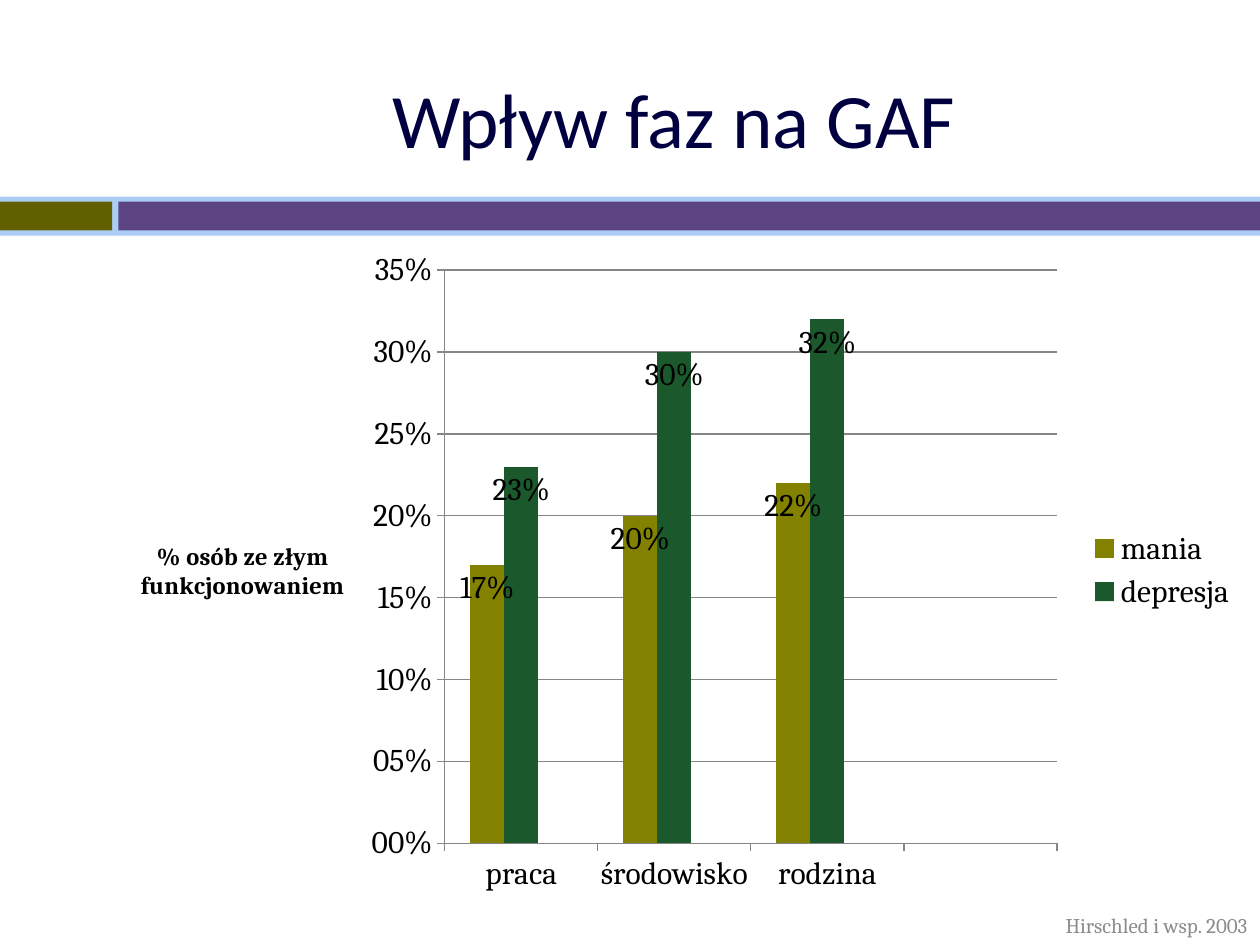
"""Build the slide on how illness phases affect GAF, with a clustered column chart."""
from lxml.etree import SubElement
from pptx import Presentation
from pptx.chart.data import CategoryChartData
from pptx.dml.color import RGBColor
from pptx.enum.chart import XL_CHART_TYPE as ChartType, XL_LABEL_POSITION as LabelPos
from pptx.enum.chart import XL_LEGEND_POSITION as LegendPos, XL_TICK_MARK as Tick
from pptx.enum.shapes import MSO_SHAPE as Shape
from pptx.enum.text import MSO_ANCHOR as Anchor, PP_ALIGN as Align
from pptx.oxml import parse_xml
from pptx.oxml.ns import nsdecls, qn
from pptx.util import Inches, Pt

COLORS = {
    "band": "ABCDF4", "olive": "606000", "purple": "5C4381", "title": "000040",
    "text": "000000", "source": "8C8C8C", "axis": "868686",
    "mania": "828200", "depresja": "1B582B", "Series 3": "009FEC",
}
PERCENT = "#,#00%"


def color(name):
    return RGBColor.from_string(COLORS[name])


def add_text(text, left, top, width, height, size, font, color_name, align):
    frame = slide.shapes.add_textbox(
        Inches(left), Inches(top), Inches(width), Inches(height)).text_frame
    frame.word_wrap = True
    frame.vertical_anchor = Anchor.MIDDLE
    frame.text = text
    paragraph = frame.paragraphs[0]
    paragraph.alignment = align
    run_font = paragraph.runs[0].font
    run_font.size, run_font.name = Pt(size), font
    run_font.color.rgb = color(color_name)


prs = Presentation()
prs.slide_width, prs.slide_height = Inches(10), Inches(7.5)
slide = prs.slides.add_slide(prs.slide_layouts[6])

for fill, left, top, width, height in [
    ("band", 0, 1.56, 10, 0.31),
    ("olive", 0, 1.6, 0.89, 0.23),
    ("purple", 0.94, 1.6, 9.06, 0.23),
]:
    bar = slide.shapes.add_shape(
        Shape.RECTANGLE, Inches(left), Inches(top), Inches(width), Inches(height))
    bar.shadow.inherit = False
    bar.fill.solid()
    bar.fill.fore_color.rgb = color(fill)
    bar.line.fill.background()

add_text("Wpływ faz na GAF ", 0.92, 0.31, 9, 1.25, 44, "Calibri", "title", Align.CENTER)

scores = CategoryChartData(number_format=PERCENT)
scores.categories = ["praca", "środowisko", "rodzina", ""]
scores.add_series("mania", [0.17, 0.2, 0.22, None])
scores.add_series("depresja", [0.23, 0.3, 0.32, None])
scores.add_series("Series 3", [None] * 4)
chart = slide.shapes.add_chart(
    ChartType.COLUMN_CLUSTERED, Inches(0.92), Inches(1.88), Inches(9), Inches(5.29),
    scores).chart
chart.has_title = False
chart.font.size, chart.font.name = Pt(18), "Cambria"
chart.font.color.rgb = color("text")

plot = chart.plots[0]
plot.gap_width, plot.overlap = 150, 0
plot.vary_by_categories = False
for series in plot.series:
    series.format.fill.solid()
    series.format.fill.fore_color.rgb = color(series.name)
    labels = series.data_labels
    labels.show_value = True
    labels.position = LabelPos.INSIDE_END
    labels.number_format, labels.number_format_is_linked = PERCENT, False

percent_axis = chart.value_axis
percent_axis.minimum_scale, percent_axis.maximum_scale = 0, 0.35
percent_axis.major_unit = 0.05
percent_axis.has_major_gridlines = True
percent_axis.tick_labels.number_format = PERCENT
percent_axis.tick_labels.number_format_is_linked = False
for axis in (chart.category_axis, percent_axis):
    axis.major_tick_mark = Tick.OUTSIDE
for part in (chart.category_axis, percent_axis, percent_axis.major_gridlines):
    part.format.line.color.rgb = color("axis")
    part.format.line.width = Pt(0.75)

axis_title = percent_axis.axis_title.text_frame
axis_title.text = "% osób ze złym funkcjonowaniem"
title_font = axis_title.paragraphs[0].runs[0].font
title_font.size, title_font.bold, title_font.name = Pt(14), True, "Cambria"
title_font.color.rgb = color("text")
title_body = percent_axis.axis_title._element.find(".//" + qn("a:bodyPr"))
title_body.set("rot", "0")
title_body.set("vert", "horz")

chart.has_legend = True
chart.legend.position = LegendPos.RIGHT
chart.legend.include_in_layout = False
chart.legend._element.find(qn("c:legendPos")).addnext(parse_xml(
    f'<c:legendEntry {nsdecls("c")}><c:idx val="2"/><c:delete val="1"/></c:legendEntry>'))

plot_area = chart._chartSpace.find(".//" + qn("c:plotArea"))
layout = plot_area.find(qn("c:layout"))
if layout is None:
    layout = parse_xml(f'<c:layout {nsdecls("c")}/>')
    plot_area.insert(0, layout)
manual = SubElement(layout, qn("c:manualLayout"))
for tag, value in [("layoutTarget", "inner"), ("xMode", "edge"), ("yMode", "edge"),
                   ("x", 0.29), ("y", 0.05), ("w", 0.54), ("h", 0.86)]:
    SubElement(manual, qn(f"c:{tag}")).set("val", str(value))

add_text("Hirschled i wsp. 2003", 6.85, 7.19, 3.15, 0.31, 12, "Cambria", "source", Align.RIGHT)

prs.save("out.pptx")
